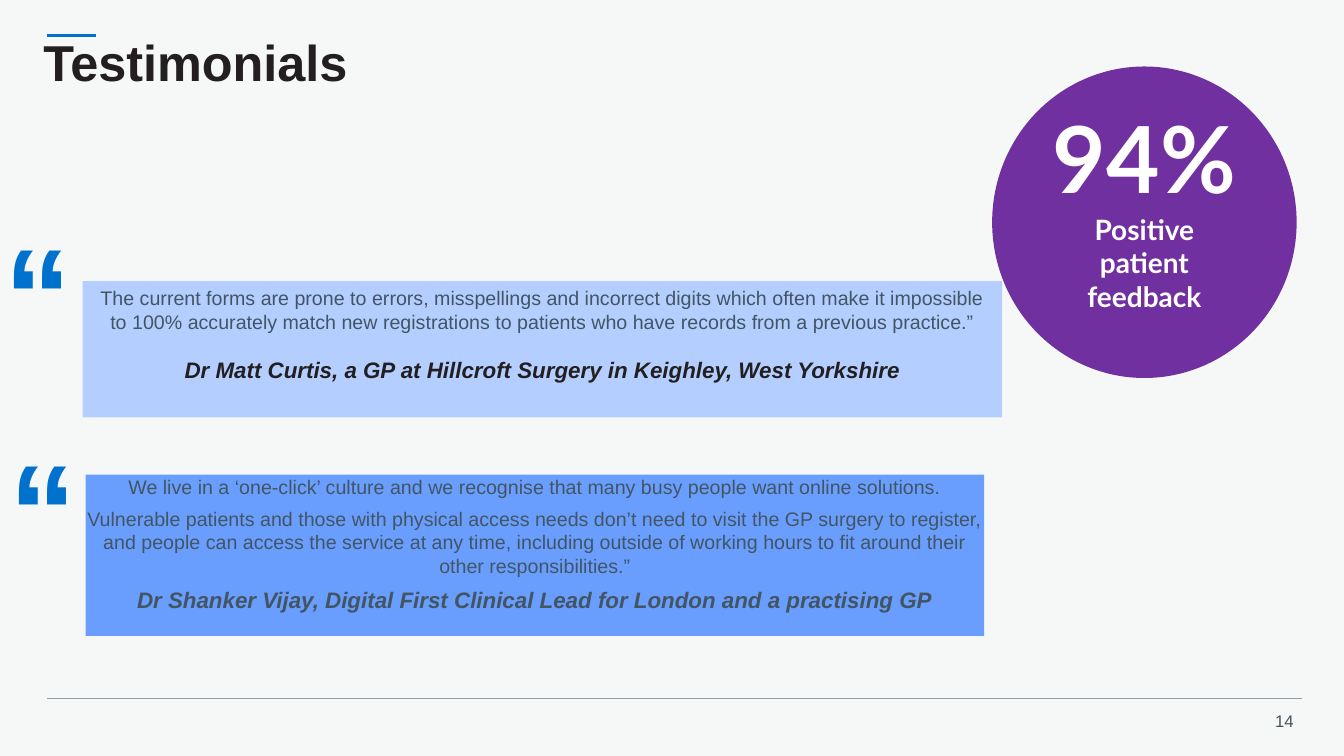
from pptx import Presentation
from pptx.dml.color import RGBColor
from pptx.enum.shapes import MSO_CONNECTOR as Link, MSO_SHAPE as Form
from pptx.enum.text import MSO_ANCHOR as Anchor, PP_ALIGN as Align
from pptx.oxml.ns import qn
from pptx.util import Pt
from lxml.etree import SubElement

PX = 9144
BLUE, SLATE, INK, WHITE = "0072CE", "425563", "231F20", "FFFFFF"
INSET = (10, 5, 10, 5)


def px(*sizes):
    return [size * PX for size in sizes]


def paint(target, color):
    target.solid()
    target.fore_color.rgb = RGBColor.from_string(color)


def setup(frame, inset, anchor=Anchor.TOP, wrap=True):
    frame.word_wrap = wrap
    frame.vertical_anchor = anchor
    (frame.margin_left, frame.margin_top,
     frame.margin_right, frame.margin_bottom) = px(*inset)


def write(frame, lines, align=Align.LEFT, before=0, after=0, face="Arial"):
    for num, (text, size, color, bold, slant) in enumerate(lines):
        para = frame.add_paragraph() if num else frame.paragraphs[0]
        para.alignment = align
        para.space_before = Pt(before if num else 0)
        para.space_after = Pt(after)
        run = para.add_run()
        run.text = text
        font = run.font
        font.name, font.size = face, Pt(size)
        font.bold, font.italic = bold, slant
        font.color.rgb = RGBColor.from_string(color)


def label(slide, box, line, inset=INSET, anchor=Anchor.TOP,
          align=Align.LEFT, wrap=True):
    frame = slide.shapes.add_textbox(*px(*box)).text_frame
    setup(frame, inset, anchor, wrap)
    write(frame, [line], align)
    return frame


def panel(slide, form, box, color, lines, inset=INSET,
          anchor=Anchor.TOP, **style):
    shape = slide.shapes.add_shape(form, *px(*box))
    shape.shadow.inherit = False
    paint(shape.fill, color)
    shape.line.fill.background()
    setup(shape.text_frame, inset, anchor)
    write(shape.text_frame, lines, Align.CENTER, **style)


def rule(slide, left, right, top, color, width):
    line = slide.shapes.add_connector(
        Link.STRAIGHT, *px(left, top, right, top))
    paint(line.line.fill, color)
    line.line.width = Pt(width)
    SubElement(line._element.spPr, qn("a:effectLst"))


def main():
    deck = Presentation()
    deck.slide_width, deck.slide_height = px(1333, 750)
    slide = deck.slides.add_slide(deck.slide_layouts[6])
    paint(slide.background.fill, "F6F8F8")

    label(slide, (1252, 700, 41, 30), ("14", 12, SLATE, False, False),
          align=Align.RIGHT, wrap=False)
    rule(slide, 47, 95, 35, BLUE, 2)
    rule(slide, 47, 1291, 693, "919EA8", 0.5)

    panel(slide, Form.RECTANGLE, (85, 471, 891, 160), "699EFF", [
        ("We live in a ‘one-click’ culture and we recognise that many busy "
         "people want online solutions.", 14, SLATE, False, False),
        ("Vulnerable patients and those with physical access needs don’t need "
         "to visit the GP surgery to register, and people can access the "
         "service at any time, including outside of working hours to fit "
         "around their other responsibilities.”", 14, SLATE, False, False),
        ("Dr Shanker Vijay, Digital First Clinical Lead for London and a "
         "practising GP", 16, SLATE, True, True),
    ], inset=(0, 0, 0, 0), after=6)
    panel(slide, Form.RECTANGLE, (82, 279, 912, 135), "B4CFFF", [
        ("The current forms are prone to errors, misspellings and incorrect "
         "digits which often make it impossible to 100% accurately match new "
         "registrations to patients who have records from a previous "
         "practice.”", 14, SLATE, False, False),
        ("Dr Matt Curtis, a GP at Hillcroft Surgery in Keighley, West "
         "Yorkshire", 16, INK, True, True),
    ], before=16)
    panel(slide, Form.OVAL, (984, 66, 302, 309), "7030A0", [
        ("94%", 66, WHITE, True, False),
        ("Positive patient feedback", 20, WHITE, True, False),
    ], inset=(10, 5, 10, 35), anchor=Anchor.MIDDLE, face="Lato")

    title = label(slide, (43, 17, 1247, 95),
                  ("Testimonials", 36, INK, True, False),
                  inset=(0, 0, 0, 0), anchor=Anchor.MIDDLE)
    title.paragraphs[0].line_spacing = 0.9
    for left, top in ((-5, 203), (0, 417)):
        label(slide, (left, top, 95, 172), ("“", 96, BLUE, True, False))

    deck.save("out.pptx")


if __name__ == "__main__":
    main()
